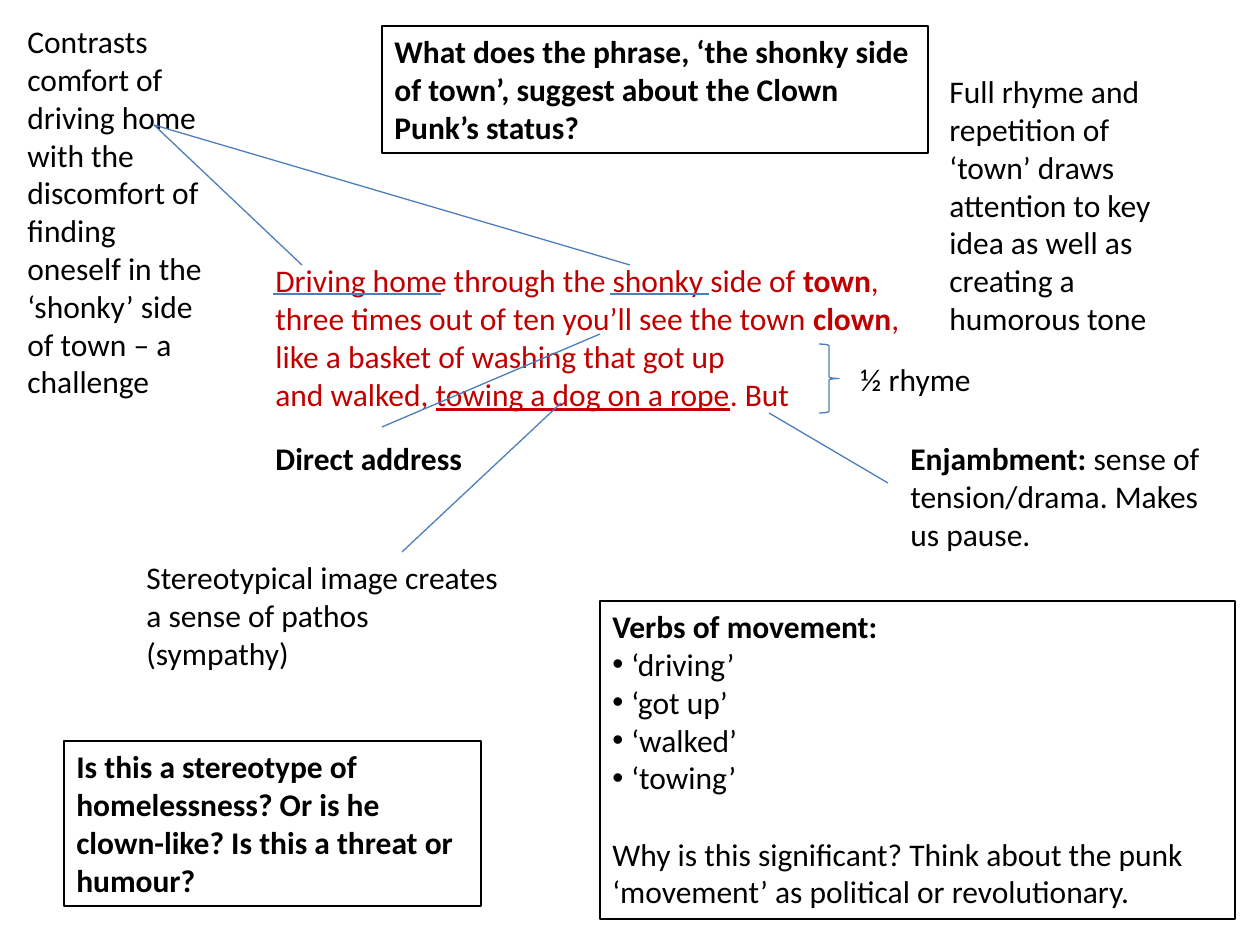
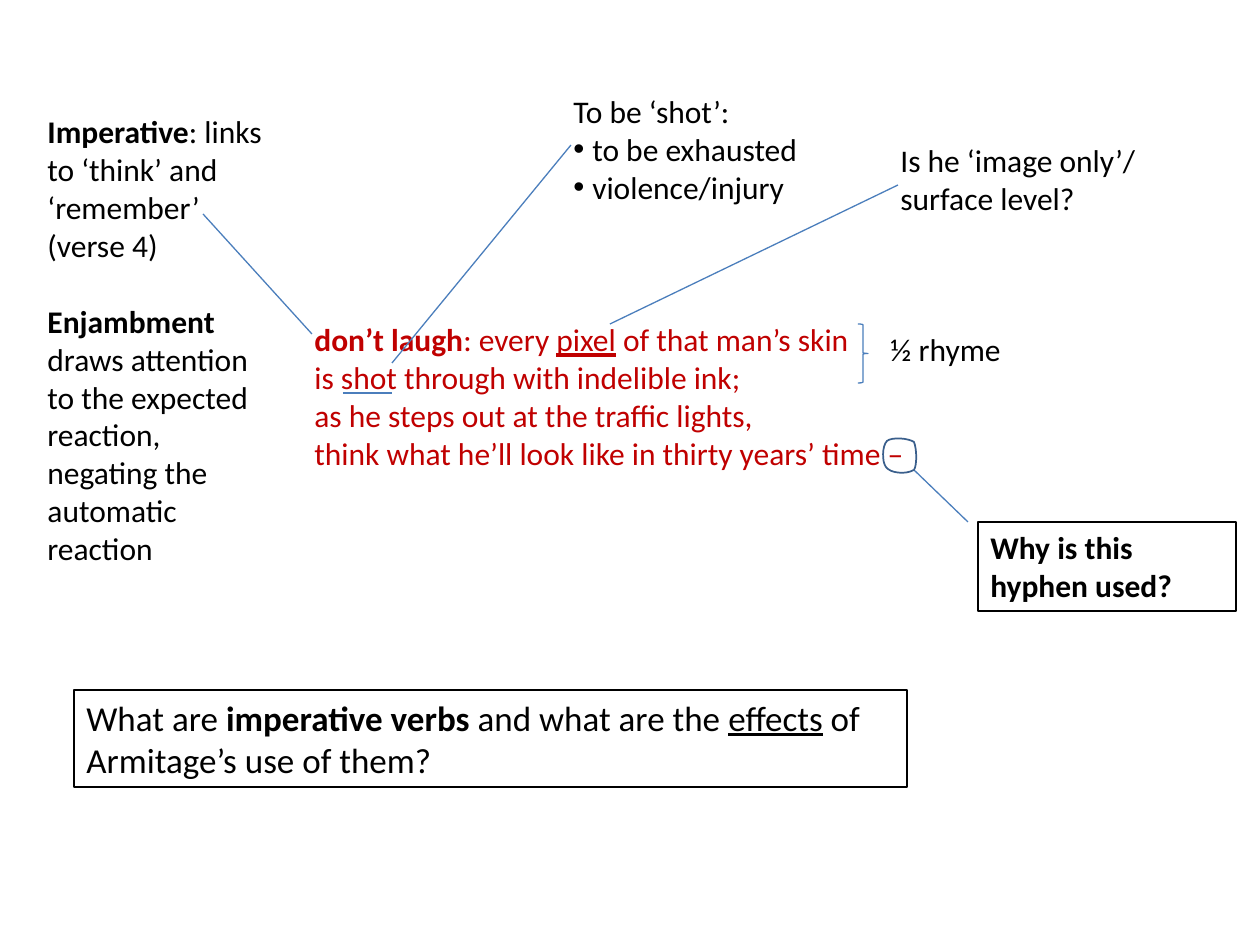
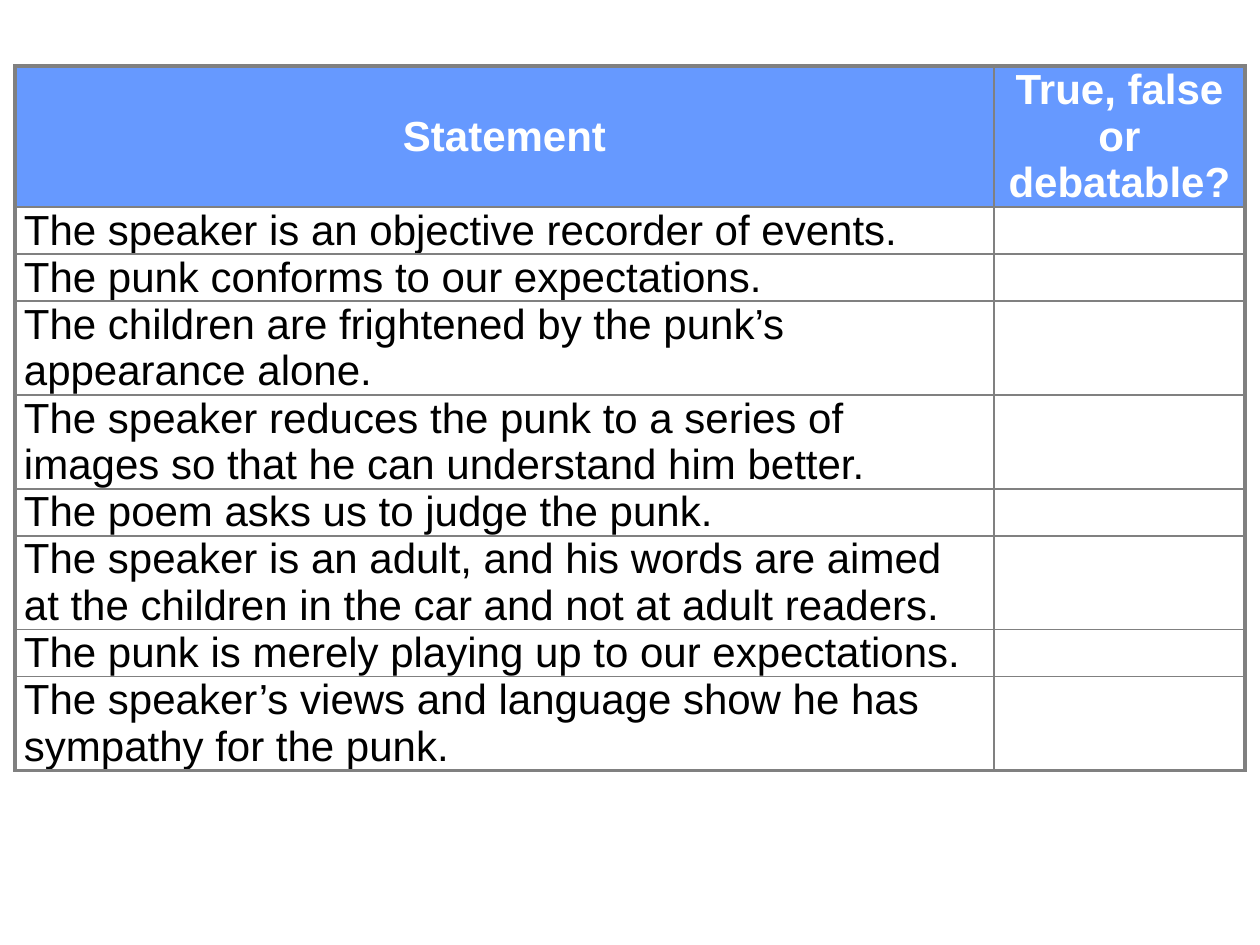
"""Build two annotated poem slides and a true-or-false statement table."""
from lxml import etree
from pptx import Presentation
from pptx import util as u
from pptx.dml.color import RGBColor
from pptx.enum import shapes, text
from pptx.oxml.ns import qn

PX = u.Inches(1) / 126
BLACK = RGBColor(0x00, 0x00, 0x00)
WHITE = RGBColor(0xFF, 0xFF, 0xFF)
POEM_RED = RGBColor(0xC0, 0x00, 0x00)
LINE_BLUE = RGBColor(0x4B, 0x7E, 0xBC)
RING_BLUE = RGBColor(0x3A, 0x5F, 0x8C)
HEADER_BLUE = RGBColor(0x66, 0x99, 0xFF)
GRID_GREY = RGBColor(0x80, 0x80, 0x80)


def emu(*lengths):
    """Turn px lengths into EMU."""
    return [u.Emu(round(n * PX)) for n in lengths]


def add_note(s, box, lines, color=BLACK, size=18, wrap=True, border=False, gap_before=None):
    """Add a text box; *bold*, _underline_ and a leading bullet are marked in the lines."""
    sp = s.shapes.add_textbox(*emu(*box))
    tf = sp.text_frame
    tf.word_wrap = wrap
    tf.auto_size = text.MSO_AUTO_SIZE.SHAPE_TO_FIT_TEXT
    if border:
        sp.line.color.rgb = BLACK
        sp.line.width = u.Pt(0.75)
    for n, line in enumerate(lines):
        p = tf.paragraphs[0] if n == 0 else tf.add_paragraph()
        p.font.name, p.font.size = "Calibri", u.Pt(size)
        p.font.color.rgb = color
        if n == gap_before:
            p.space_before = u.Pt(22)
        if line.startswith("• "):
            line = line[2:]
            pPr = p._p.get_or_add_pPr()
            indent = emu(19)[0]
            pPr.set("marL", str(indent))
            pPr.set("indent", str(-indent))
            bullet = etree.Element(qn("a:buChar"), char="•")
            font = etree.Element(qn("a:buFont"), typeface="Arial")
            pPr.find(qn("a:defRPr")).addprevious(font)
            font.addnext(bullet)
        for i, part in enumerate(line.split("*")):
            for j, words in enumerate(part.split("_")):
                if words:
                    r = p.add_run()
                    r.text = words
                    if i % 2:
                        r.font.bold = True
                    if j % 2:
                        r.font.underline = True


prs = Presentation()
prs.slide_width, prs.slide_height = emu(1260, 945)
verse_1, verse_2, quiz = [prs.slides.add_slide(prs.slide_layouts[6]) for _ in range(3)]

add_note(verse_1, (263, 255, 655, 204), [
    "Driving home through the shonky side of *town*,",
    "three times out of ten you’ll see the town *clown*,",
    "like a basket of washing that got up",
    "and walked, _towing a dog on a rope_. But"], color=POEM_RED, wrap=False)
add_note(verse_1, (15, 16, 208, 394), [
    "Contrasts comfort of driving home with the discomfort of finding oneself "
    "in the ‘shonky’ side of town – a challenge"])
add_note(verse_1, (848, 354, 137, 50), ["½ rhyme"], wrap=False)
add_note(verse_1, (898, 433, 318, 127), ["*Enjambment: *sense of tension/drama. Makes us pause."])
add_note(verse_1, (263, 433, 221, 50), ["*Direct address*"], wrap=False)
add_note(verse_1, (64, 741, 417, 165), [
    "*Is this a stereotype of homelessness? Or is he clown-like? Is this a threat or humour?*"],
    border=True)
add_note(verse_1, (600, 601, 635, 318), [
    "*Verbs of movement:*", "• ‘driving’", "• ‘got up’", "• ‘walked’", "• ‘towing’",
    "Why is this significant? Think about the punk ‘movement’ as political or revolutionary."],
    border=True, gap_before=5)
add_note(verse_1, (382, 26, 546, 127), [
    "*What does the phrase, ‘the shonky side of town’, suggest about the Clown Punk’s status?*"],
    border=True)
add_note(verse_1, (937, 66, 307, 280), [
    "Full rhyme and repetition of", "‘town’ draws attention to key",
    "idea as well as creating a", "humorous tone"])
add_note(verse_1, (134, 552, 377, 127), ["Stereotypical image creates a sense of pathos (sympathy)"])

add_note(verse_2, (302, 314, 622, 204), [
    "*don’t laugh*: every _pixel_ of that man’s skin",
    "is shot through with indelible ink;",
    "as he steps out at the traffic lights,",
    "think what he’ll look like in thirty years’ time –"], color=POEM_RED, wrap=False)
add_note(verse_2, (878, 324, 137, 50), ["½ rhyme"], wrap=False)
add_note(verse_2, (35, 106, 258, 471), [
    "*Imperative*: links to ‘think’ and ‘remember’ (verse 4)",
    "*Enjambment* draws attention to the expected reaction,",
    "negating the automatic", "reaction"], gap_before=1)
add_note(verse_2, (561, 86, 251, 127), [
    "To be ‘shot’:", "• to be exhausted", "• violence/injury"], wrap=False)
add_note(verse_2, (978, 522, 258, 89), ["*Why is this hyphen used?*"], border=True)
add_note(verse_2, (888, 135, 297, 89), ["Is he ‘image only’/ surface level?"])
add_note(verse_2, (74, 690, 833, 97), [
    "What are *imperative verbs* and what are the _effects_ of Armitage’s use of them?"],
    size=20, border=True)

pointers = [
    (verse_1, [(273, 294, 441, 294), (610, 294, 709, 294), (302, 265, 154, 125),
               (630, 265, 154, 125), (769, 413, 888, 483), (382, 427, 600, 334),
               (561, 403, 402, 552)]),
    (verse_2, [(312, 334, 203, 214), (343, 393, 392, 393), (392, 363, 571, 145),
               (914, 470, 968, 522), (610, 324, 898, 185)])]
for s, ends in pointers:
    for end in ends:
        cxn = s.shapes.add_connector(shapes.MSO_CONNECTOR.STRAIGHT, *emu(*end))
        cxn.line.color.rgb = LINE_BLUE
        cxn.line.width = u.Pt(0.75)
        etree.SubElement(cxn._element.spPr, qn("a:effectLst"))

for s, box in [(verse_1, (819, 344, 20, 69)), (verse_2, (858, 324, 10, 59))]:
    brace = s.shapes.add_shape(shapes.MSO_SHAPE.RIGHT_BRACE, *emu(*box))
    brace.shadow.inherit = False
    brace.fill.background()
    brace.line.color.rgb = LINE_BLUE
    brace.line.width = u.Pt(0.75)

start = (914, 442)
curves = [((908, 438), (892, 437), (887, 441)), ((882, 446), (882, 462), (886, 467)),
          ((890, 473), (905, 475), (914, 470)), ((917, 466), (917, 449), (914, 442))]
fb = verse_2.shapes.build_freeform(*emu(*start))
for c1, c2, end in curves:
    for t in [k / 8 for k in range(1, 9)]:
        point = [(1 - t) ** 3 * a + 3 * (1 - t) ** 2 * t * b + 3 * (1 - t) * t ** 2 * c + t ** 3 * d
                 for a, b, c, d in zip(start, c1, c2, end)]
        fb.add_line_segments([emu(*point)], close=False)
    start = end
fb.add_line_segments([], close=True)
ring = fb.convert_to_shape()
ring.shadow.inherit = False
ring.fill.background()
ring.line.color.rgb = RING_BLUE
ring.line.width = u.Pt(1)

rows = [
    ("Statement", "True, false or debatable?", 3),
    ("The speaker is an objective recorder of events.", "", 1),
    ("The punk conforms to our expectations.", "", 1),
    ("The children are frightened by the punk’s appearance alone.", "", 2),
    ("The speaker reduces the punk to a series of images so that he can understand him better.", "", 2),
    ("The poem asks us to judge the punk.", "", 1),
    ("The speaker is an adult, and his words are aimed at the children in the car "
     "and not at adult readers.", "", 2),
    ("The punk is merely playing up to our expectations.", "", 1),
    ("The speaker’s views and language show he has sympathy for the punk.", "", 2)]
tbl = quiz.shapes.add_table(len(rows), 2, *emu(15, 66, 1230, 705)).table
tbl.horz_banding = False
for col, width in zip(tbl.columns, emu(979, 251)):
    col.width = width
for i, (statement, answer, line_count) in enumerate(rows):
    tbl.rows[i].height = emu(47 * line_count)[0]
    for j, words in enumerate((statement, answer)):
        cell = tbl.cell(i, j)
        cell.margin_left, cell.margin_right, cell.margin_top, cell.margin_bottom = emu(9, 9, 0, 0)
        cell.vertical_anchor = text.MSO_ANCHOR.MIDDLE
        outer = {"lnL": j == 0, "lnR": j == 1, "lnT": i == 0, "lnB": i == len(rows) - 1}
        for side, is_outer in outer.items():
            ln = etree.SubElement(cell._tc.get_or_add_tcPr(), qn("a:" + side),
                                  w=str(u.Pt(2.25 if is_outer else 1)))
            fill = etree.SubElement(ln, qn("a:solidFill"))
            etree.SubElement(fill, qn("a:srgbClr"), val=str(GRID_GREY))
        if i == 0:
            cell.fill.solid()
            cell.fill.fore_color.rgb = HEADER_BLUE
        else:
            cell.fill.background()
        cell.text = words
        p = cell.text_frame.paragraphs[0]
        p.font.name, p.font.size, p.font.bold = "Arial", u.Pt(24), i == 0
        p.font.color.rgb = WHITE if i == 0 else BLACK
        if i == 0:
            p.alignment = text.PP_ALIGN.CENTER

prs.save("out.pptx")
